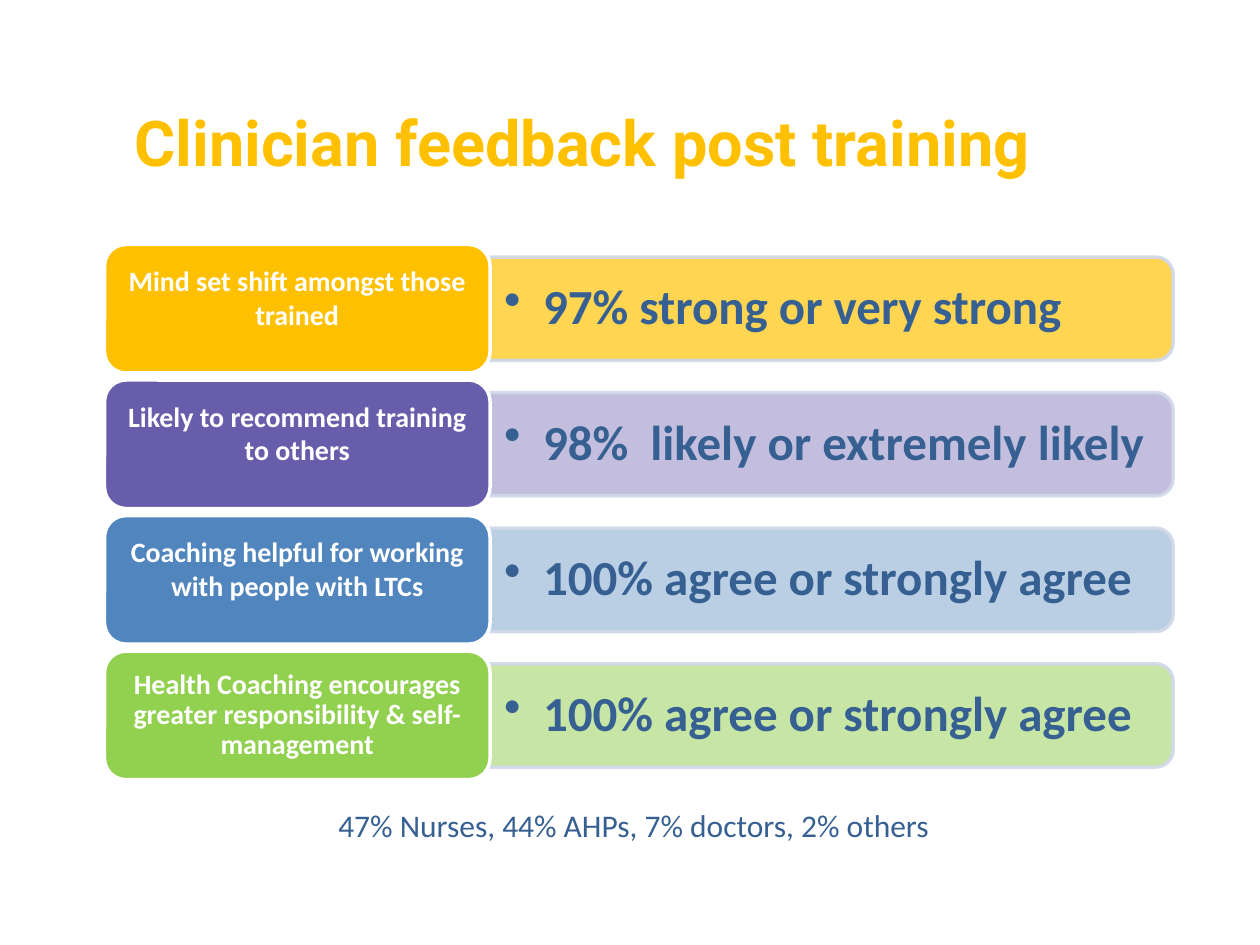
from lxml import etree
from pptx import Presentation
from pptx.dml.color import RGBColor
from pptx.enum.shapes import MSO_SHAPE
from pptx.enum.text import MSO_ANCHOR, PP_ALIGN
from pptx.oxml.ns import qn
from pptx.util import Inches, Pt

ROUNDED = MSO_SHAPE.ROUNDED_RECTANGLE
ROUNDED_TOP = MSO_SHAPE.ROUND_2_SAME_RECTANGLE
TOP, MIDDLE = MSO_ANCHOR.TOP, MSO_ANCHOR.MIDDLE
LEFT, CENTER = PP_ALIGN.LEFT, PP_ALIGN.CENTER

WHITE = RGBColor(0xFF, 0xFF, 0xFF)
NAVY = RGBColor(0x37, 0x60, 0x92)
PALE_BLUE = RGBColor(0xD0, 0xD8, 0xE8)
AMBER = RGBColor(0xFF, 0xC0, 0x00)
LIGHT_AMBER = RGBColor(0xFF, 0xD1, 0x3F)
PURPLE = RGBColor(0x68, 0x5D, 0xAB)
LIGHT_PURPLE = RGBColor(0xBD, 0xB8, 0xDA)
BLUE = RGBColor(0x51, 0x85, 0xBD)
LIGHT_BLUE = RGBColor(0xB4, 0xCA, 0xE2)
GREEN = RGBColor(0x92, 0xD0, 0x50)
LIGHT_GREEN = RGBColor(0xC2, 0xE4, 0x9C)

FIRST_CENTER, ROW_STEP = 2.45, 1.076
LABEL_LEFT, LABEL_WIDTH, LABEL_HEIGHT = 0.83, 3.06, 1.02
BAR_LEFT, BAR_WIDTH, BAR_HEIGHT = 3.88, 5.43, 0.82
RESULT_WIDTH, RESULT_HEIGHT = 5.39, 0.74

FEEDBACK = [
    ("Mind set shift amongst those trained",
     "97% strong or very strong", AMBER, LIGHT_AMBER, 1.0, 0.21),
    ("Likely to recommend training to others",
     "98%  likely or extremely likely", PURPLE, LIGHT_PURPLE, 1.0, 0.21),
    ("Coaching helpful for working with people with LTCs",
     "100% agree or strongly agree", BLUE, LIGHT_BLUE, 1.0, 0.21),
    ("Health Coaching encourages greater responsibility & self-management",
     "100% agree or strongly agree", GREEN, LIGHT_GREEN, 0.9, 0.03),
]


def write_text(shape, text, size, color, bold=True, font="Calibri",
               align=LEFT, anchor=MIDDLE, insets=(0.1, 0.05, 0.1, 0.05)):
    frame = shape.text_frame
    frame.text = text
    frame.word_wrap = True
    frame.vertical_anchor = anchor
    (frame.margin_left, frame.margin_top,
     frame.margin_right, frame.margin_bottom) = map(Inches, insets)
    para = frame.paragraphs[0]
    para.alignment = align
    span = para.runs[0].font
    span.name, span.size, span.bold = font, Pt(size), bold
    span.color.rgb = color
    return para


def add_text(page, left, top, width, height, *args, **options):
    box = page.shapes.add_textbox(
        Inches(left), Inches(top), Inches(width), Inches(height))
    return write_text(box, *args, **options)


def add_panel(page, kind, left, top, width, height, fill, line):
    panel = page.shapes.add_shape(
        kind, Inches(left), Inches(top), Inches(width), Inches(height))
    panel.shadow.inherit = False
    panel.fill.solid()
    panel.fill.fore_color.rgb = fill
    panel.line.color.rgb = line
    panel.line.width = Pt(2)
    return panel


def set_opacity(shape, percent):
    for color in shape._element.spPr.iter(qn("a:srgbClr")):
        etree.SubElement(color, qn("a:alpha"), val=str(percent * 1000))


def add_bullet(para):
    properties = para._p.get_or_add_pPr()
    properties.set("marL", str(Inches(0.31)))
    properties.set("indent", str(Inches(-0.31)))
    etree.SubElement(properties, qn("a:buChar"), char="•")


def add_result(page, middle, text, fill):
    bar_center = BAR_LEFT + BAR_WIDTH / 2
    bar = add_panel(page, ROUNDED_TOP, bar_center - BAR_HEIGHT / 2,
                    middle - BAR_WIDTH / 2, BAR_HEIGHT, BAR_WIDTH,
                    fill, PALE_BLUE)
    bar.rotation = 90
    set_opacity(bar, 90)
    para = add_text(page, BAR_LEFT, middle - RESULT_HEIGHT / 2,
                    RESULT_WIDTH, RESULT_HEIGHT, text, 28, NAVY,
                    insets=(0.12, 0.06, 0.12, 0.06))
    para.line_spacing = 0.9
    add_bullet(para)


def add_label(page, middle, text, fill, spacing, bottom_inset):
    label = add_panel(page, ROUNDED, LABEL_LEFT, middle - LABEL_HEIGHT / 2,
                      LABEL_WIDTH, LABEL_HEIGHT, fill, WHITE)
    para = write_text(label, text, 16, WHITE, align=CENTER,
                      insets=(0.07, 0.03, 0.07, bottom_inset))
    para.line_spacing = spacing


def main():
    deck = Presentation()
    deck.slide_width, deck.slide_height = Inches(10), Inches(7.5)
    page = deck.slides.add_slide(deck.slide_layouts[6])
    add_text(page, 0.97, 0.76, 9, 0.73, "Clinician feedback post training",
             36, AMBER, font="Roboto")
    for row, (label, result, color, tint, spacing, inset) in enumerate(FEEDBACK):
        middle = FIRST_CENTER + row * ROW_STEP
        add_result(page, middle, result, tint)
        add_label(page, middle, label, color, spacing, inset)
    add_text(page, 0.82, 6.35, 8.42, 0.71,
             "47% Nurses, 44% AHPs, 7% doctors, 2% others",
             18, NAVY, bold=False, align=CENTER, anchor=TOP)
    deck.save("out.pptx")


if __name__ == "__main__":
    main()
